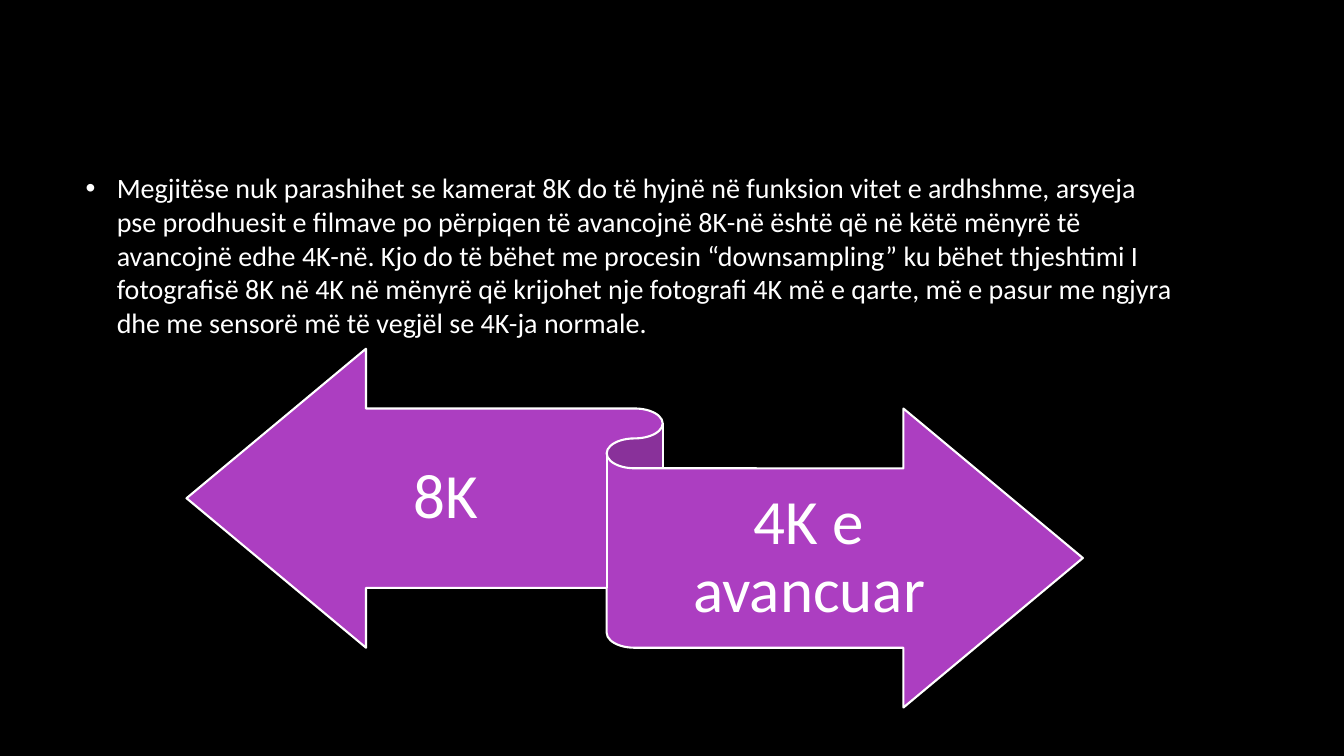
from lxml.etree import SubElement
from pptx import Presentation
from pptx.dml.color import RGBColor
from pptx.enum.shapes import MSO_SHAPE
from pptx.enum.text import MSO_ANCHOR, PP_ALIGN
from pptx.oxml.ns import qn
from pptx.util import Inches, Pt

BLACK = RGBColor(0x00, 0x00, 0x00)
WHITE = RGBColor(0xFF, 0xFF, 0xFF)
PURPLE = RGBColor(0xAC, 0x3E, 0xC1)

BODY = (
    "Megjitëse nuk parashihet se kamerat 8K do të hyjnë në funksion vitet e ardhshme, "
    "arsyeja pse prodhuesit e filmave po përpiqen të avancojnë 8K-në është që në këtë "
    "mënyrë të avancojnë edhe 4K-në. Kjo do të bëhet me procesin “downsampling” ku bëhet "
    "thjeshtimi I fotografisë 8K në 4K në mënyrë që krijohet nje fotografi 4K më e qarte, "
    "më e pasur me ngjyra dhe me sensorë më të vegjël se 4K-ja normale."
)


def add_text(page, text, left, top, width, height, size=20, align=PP_ALIGN.LEFT,
             line_spacing=1.0, space_after=0, insets=(0.1, 0.05, 0.1, 0.05)):
    """Add a vertically centred white text box and return its paragraph."""
    box = page.shapes.add_textbox(Inches(left), Inches(top), Inches(width), Inches(height))
    frame = box.text_frame
    frame.word_wrap = True
    frame.vertical_anchor = MSO_ANCHOR.MIDDLE
    (frame.margin_left, frame.margin_top,
     frame.margin_right, frame.margin_bottom) = map(Inches, insets)
    para = frame.paragraphs[0]
    para.alignment = align
    para.line_spacing = line_spacing
    para.space_after = Pt(space_after)
    span = para.add_run()
    span.text = text
    span.font.name = "Calibri"
    span.font.size = Pt(size)
    span.font.color.rgb = WHITE
    return para


def add_bullet(para, indent):
    """Give a paragraph a round white bullet with a hanging indent."""
    properties = para._p.get_or_add_pPr()
    properties.set("marL", str(Inches(indent)))
    properties.set("indent", str(-Inches(indent)))
    colour = SubElement(properties, qn("a:buClr"))
    SubElement(colour, qn("a:srgbClr"), val=str(WHITE))
    SubElement(properties, qn("a:buFont"), typeface="Arial")
    SubElement(properties, qn("a:buChar"), char="•")


def add_ribbon(page, left, top, width, height):
    """Add the folded double arrow."""
    ribbon = page.shapes.add_shape(MSO_SHAPE.LEFT_RIGHT_RIBBON, Inches(left), Inches(top),
                                   Inches(width), Inches(height))
    ribbon.shadow.inherit = False
    ribbon.fill.solid()
    ribbon.fill.fore_color.rgb = PURPLE
    ribbon.line.color.rgb = WHITE
    ribbon.line.width = Pt(1.5)


def add_ribbon_label(page, text, left, top, width):
    """Add a large centred label on one half of the ribbon."""
    add_text(page, text, left, top, width, 1.74, size=45, align=PP_ALIGN.CENTER,
             line_spacing=0.9, insets=(0, 0.17, 0, 0.19))


def main():
    """Build the slide and save it."""
    deck = Presentation()
    deck.slide_width, deck.slide_height = Inches(13.33), Inches(7.5)
    page = deck.slides.add_slide(deck.slide_layouts[6])
    page.background.fill.solid()
    page.background.fill.fore_color.rgb = BLACK

    body = add_text(page, BODY, 0.75, 0.6, 11.08, 3.86, space_after=10,
                    insets=(0.1, 0.05, 0.16, 0.05))
    add_bullet(body, 0.31)
    add_ribbon(page, 1.85, 3.46, 8.89, 3.56)
    add_ribbon_label(page, "8K", 2.96, 4.08, 2.93)
    add_ribbon_label(page, "4K e avancuar", 6.29, 4.68, 3.47)
    deck.save("out.pptx")


if __name__ == "__main__":
    main()
